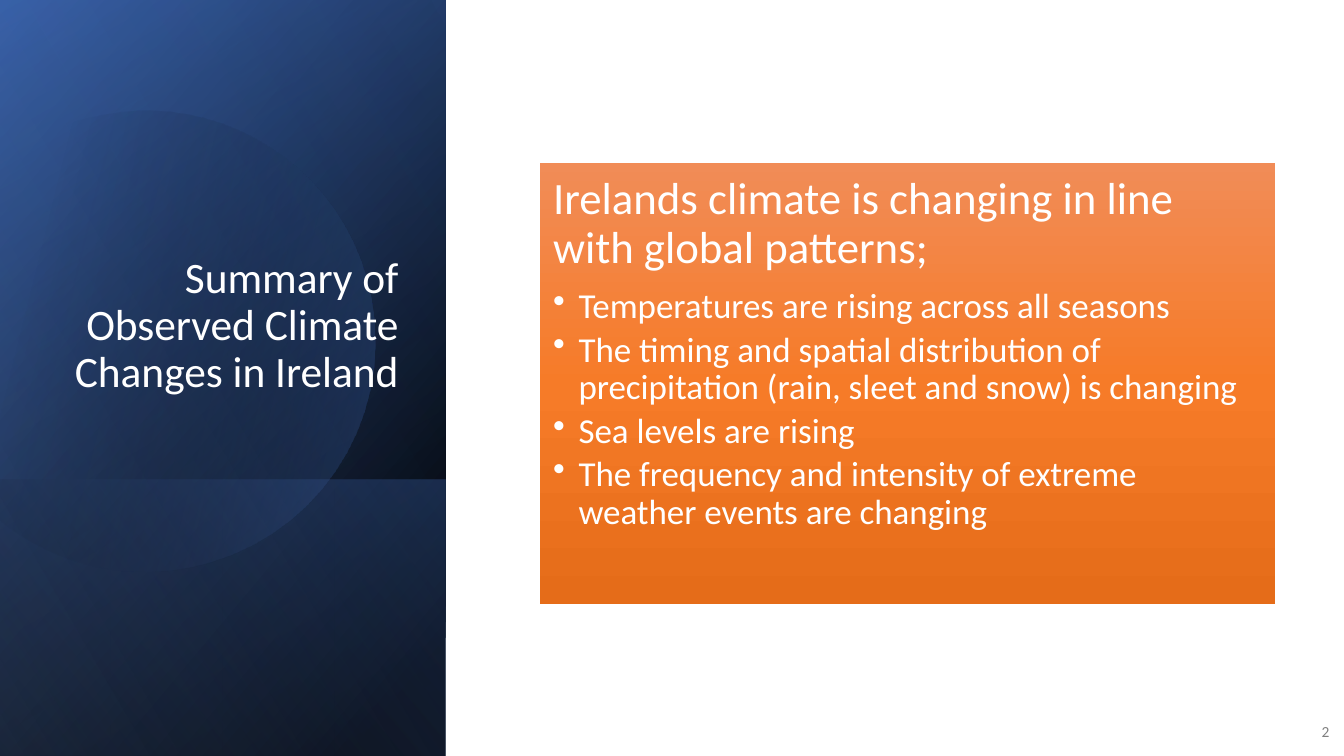
"""Build the slide that sums up observed climate changes in Ireland."""
from dataclasses import dataclass
from math import cos, radians, sin

from pptx import Presentation
from pptx.dml.color import RGBColor
from pptx.enum.shapes import MSO_SHAPE as Shape
from pptx.enum.text import MSO_ANCHOR as Anchor, PP_ALIGN as Align
from pptx.oxml import parse_xml
from pptx.oxml.ns import nsdecls, qn
from pptx.util import Cm, Pt

BLACK = RGBColor(0x00, 0x00, 0x00)
WHITE = RGBColor(0xFF, 0xFF, 0xFF)
GREY = RGBColor(0x80, 0x80, 0x80)
NAVY = RGBColor(0x2F, 0x55, 0x97)
BLUE = RGBColor(0x44, 0x72, 0xC4)
PALE_BLUE = RGBColor(0x8F, 0xAA, 0xDC)
ORANGE_LIGHT = RGBColor(0xF1, 0x8C, 0x57)
ORANGE = RGBColor(0xF6, 0x7B, 0x28)
ORANGE_DARK = RGBColor(0xE5, 0x6C, 0x19)

Box = tuple[float, float, float, float]
Point = tuple[float, float]


@dataclass
class Stop:
    pos: int
    color: RGBColor
    alpha: int = 100


@dataclass
class Panel:
    box: Box
    angle: int
    stops: list[Stop]
    turned: bool = True


@dataclass
class Para:
    text: str
    size: float
    after: float = 0
    bullet: bool = False
    align: Align = Align.LEFT
    spacing: float = 0.9
    color: RGBColor = WHITE


@dataclass
class TextBlock:
    box: Box
    paras: list[Para]
    frame: dict


SIDE = (-3.91, 3.91, 19.05, 11.23)
CARD = (13.61, 4.11, 18.52, 11.1)

BASE_PANELS = [
    Panel(SIDE, 50, [Stop(8, BLACK), Stop(100, NAVY)]),
    Panel(SIDE, 30, [Stop(0, BLACK, 0), Stop(99, BLUE, 46)]),
    Panel((2.13, 9.96, 6.96, 11.23), 130, [Stop(2, BLUE, 29), Stop(100, BLACK, 30)]),
]
TOP_PANELS = [
    Panel(SIDE, 120, [Stop(0, BLACK, 0), Stop(99, PALE_BLUE, 11)]),
    Panel(CARD, 90, [Stop(0, ORANGE_LIGHT), Stop(50, ORANGE), Stop(100, ORANGE_DARK)], turned=False),
]

DISC_TILT = -16.1
DISC_CENTRE = (4.03, 8.5)
DISC_STOPS = [Stop(29, BLACK, 0), Stop(100, BLUE, 43)]
DISC_START = (3.78, 2.79)
DISC_SEGMENTS: list[list[Point]] = [
    [(6.25, 2.84), (8.51, 4.5), (9.22, 6.99)],
    [(10.11, 10.08), (8.33, 13.28), (5.26, 14.17)],
    [(3.33, 14.73), (1.35, 14.25), (-0.08, 13.06)],
    [(-0.38, 12.78)],
    [(-0.38, 4.45)],
    [(0, 4.09)],
    [(0.58, 3.61), (1.27, 3.25), (2.03, 3.02)],
    [(2.62, 2.87), (3.2, 2.79), DISC_START],
]

BULLETS = [
    "Temperatures are rising across all seasons",
    "The timing and spatial distribution of precipitation (rain, sleet and snow) is changing",
    "Sea levels are rising",
    "The frequency and intensity of extreme weather events are changing",
]
TEXTS = [
    TextBlock((1.63, 4.67, 8.66, 6.65),
              [Para("Summary of Observed Climate Changes in Ireland", 31, align=Align.RIGHT)],
              {"vertical_anchor": Anchor.BOTTOM, "margin_bottom": Cm(1.32)}),
    TextBlock((32.51, 17.93, 1.24, 1.02),
              [Para("2", 11, 6, align=Align.RIGHT, spacing=1.0, color=GREY)],
              {"vertical_anchor": Anchor.MIDDLE}),
    TextBlock(CARD,
              [Para("Irelands climate is changing in line with global patterns;", 32, 11)]
              + [Para(text, 25, 4, bullet=True) for text in BULLETS],
              {f"margin_{side}": Cm(0.33) for side in ("left", "top", "right", "bottom")}),
]


def set_all(obj: object, values: dict) -> None:
    for name, value in values.items():
        setattr(obj, name, value)


def paint(sp, stops: list[Stop], angle: int) -> None:
    """Give a shape a gradient fill without line or shadow."""
    marks = "".join(
        f'<a:gs pos="{stop.pos * 1000}"><a:srgbClr val="{stop.color}">'
        f'<a:alpha val="{stop.alpha * 1000}"/></a:srgbClr></a:gs>' for stop in stops)
    gradient = parse_xml(
        f'<a:gradFill {nsdecls("a")} rotWithShape="1"><a:gsLst>{marks}</a:gsLst>'
        f'<a:lin ang="{angle * 60000}" scaled="0"/></a:gradFill>')
    sp.fill.background()
    props = sp._element.spPr
    props.replace(props.find(qn("a:noFill")), gradient)
    sp.line.fill.background()
    sp.shadow.inherit = False


def add_panel(s, panel: Panel) -> None:
    sp = s.shapes.add_shape(Shape.RECTANGLE, *map(Cm, panel.box))
    if panel.turned:
        sp.rotation = 90
        sp._element.spPr.get_or_add_xfrm().set("flipH", "1")
    paint(sp, panel.stops, panel.angle)


def curve(points: list[Point], steps: int = 16) -> list[Point]:
    """Return points along a cubic curve given by its four control points."""
    weights = [((1 - t) ** 3, 3 * t * (1 - t) ** 2, 3 * t * t * (1 - t), t ** 3)
               for t in (i / steps for i in range(1, steps + 1))]
    return [(sum(w * x for w, (x, _) in zip(ws, points)),
             sum(w * y for w, (_, y) in zip(ws, points))) for ws in weights]


def untilt(point: Point) -> Point:
    """Turn a point back about the disc centre, before the shape is tilted."""
    (cx, cy), turn = DISC_CENTRE, radians(-DISC_TILT)
    dx, dy = point[0] - cx, point[1] - cy
    return (Cm(cx + dx * cos(turn) - dy * sin(turn)),
            Cm(cy + dx * sin(turn) + dy * cos(turn)))


def add_disc(s) -> None:
    outline = [DISC_START]
    for segment in DISC_SEGMENTS:
        outline += curve([outline[-1], *segment]) if len(segment) == 3 else segment
    start, *rest = map(untilt, outline)
    builder = s.shapes.build_freeform(*start)
    builder.add_line_segments(rest, close=True)
    sp = builder.convert_to_shape()
    sp.rotation = DISC_TILT
    paint(sp, DISC_STOPS, 30)


def add_text(s, block: TextBlock) -> None:
    tf = s.shapes.add_textbox(*map(Cm, block.box)).text_frame
    set_all(tf, {"word_wrap": True, **block.frame})
    for i, para in enumerate(block.paras):
        p = tf.paragraphs[0] if i == 0 else tf.add_paragraph()
        set_all(p, {"alignment": para.align, "line_spacing": para.spacing,
                    "space_after": Pt(para.after)})
        if para.bullet:
            props = p._p.get_or_add_pPr()
            props.set("marL", str(Cm(0.64)))
            props.set("indent", str(-Cm(0.64)))
            props.append(parse_xml(f'<a:buChar {nsdecls("a")} char="•"/>'))
        r = p.add_run()
        r.text = para.text
        set_all(r.font, {"name": "Calibri", "size": Pt(para.size)})
        r.font.color.rgb = para.color


def main() -> None:
    prs = Presentation()
    set_all(prs, {"slide_width": Cm(33.87), "slide_height": Cm(19.05)})
    s = prs.slides.add_slide(prs.slide_layouts[6])
    for panel in BASE_PANELS:
        add_panel(s, panel)
    add_disc(s)
    for panel in TOP_PANELS:
        add_panel(s, panel)
    for block in TEXTS:
        add_text(s, block)
    prs.save("out.pptx")


if __name__ == "__main__":
    main()
